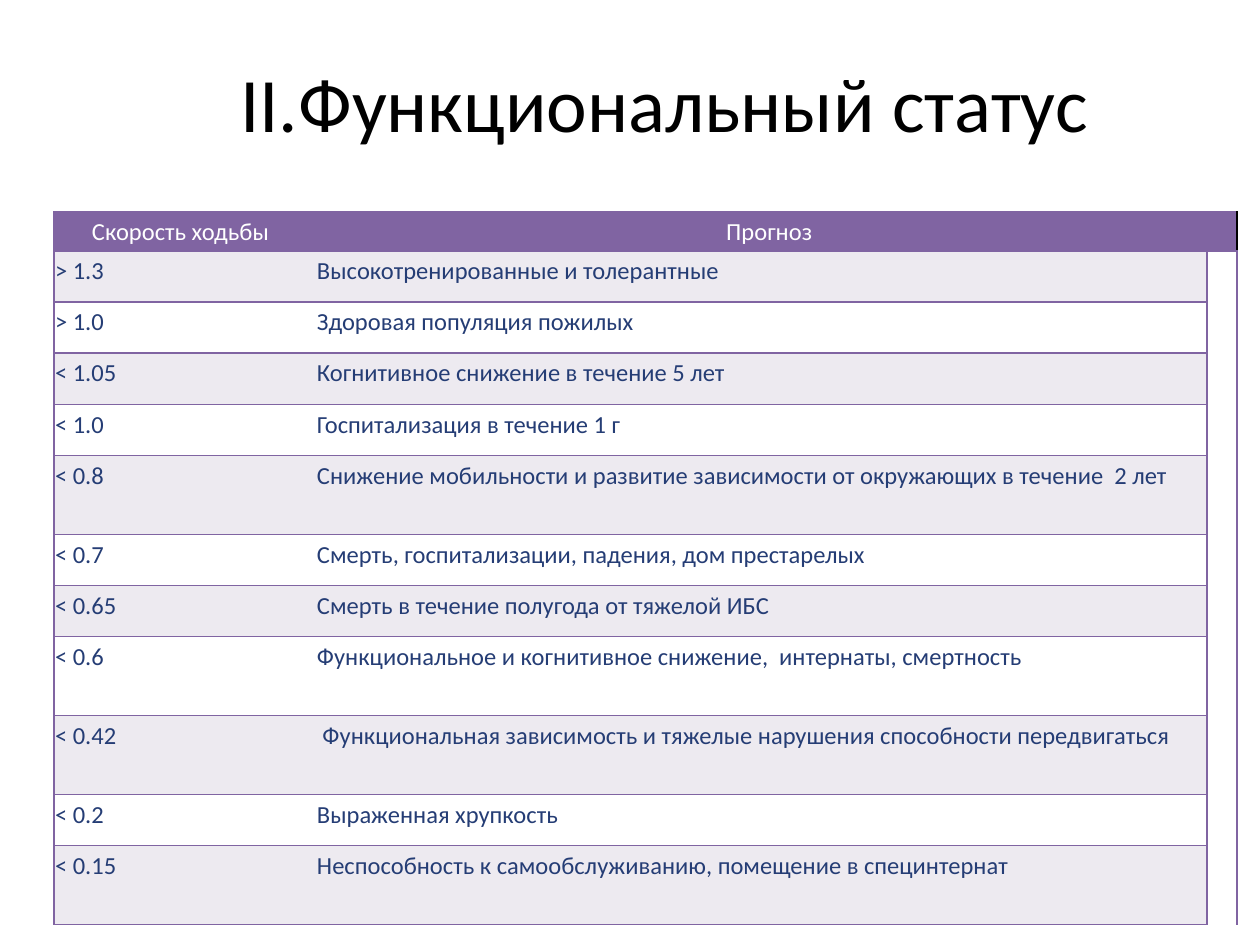
"""Build the slide on functional status: walking speed against prognosis."""
from typing import NamedTuple

from lxml.etree import SubElement
from pptx import Presentation
from pptx.dml.color import RGBColor
from pptx.enum.text import MSO_ANCHOR, PP_ALIGN
from pptx.oxml.ns import qn
from pptx.util import Emu, Pt

COLORS = {"title": "000000", "violet": "8064A2", "header_text": "FFFFFF",
          "edge": "000000", "text": "253D75", "odd": "EDEAF0", "even": "FFFFFF"}
FONT = "Calibri"
PLAIN_STYLE = "{2D5ABB26-0587-4C30-8999-92F81FD0307C}"
COLUMNS = (253, 9, 891, 9)
HEADER_HEIGHT, SHORT, TALL = 39, 49, 79


class Level(NamedTuple):
    speed: str
    prognosis: str
    height: int = SHORT


LEVELS = (
    Level("> 1.3", "Высокотренированные и толерантные", 50),
    Level("> 1.0", "Здоровая популяция пожилых"),
    Level("< 1.05", "Когнитивное снижение в течение 5 лет", 50),
    Level("< 1.0", "Госпитализация в течение 1 г"),
    Level("< 0.8", "Снижение мобильности и развитие зависимости от окружающих в течение  2 лет", TALL),
    Level("< 0.7", "Смерть, госпитализации, падения, дом престарелых"),
    Level("< 0.65", "Смерть в течение полугода от тяжелой ИБС"),
    Level("< 0.6", "Функциональное и когнитивное снижение,  интернаты, смертность", TALL),
    Level("< 0.42", " Функциональная зависимость и тяжелые нарушения способности передвигаться", TALL),
    Level("< 0.2", "Выраженная хрупкость"),
    Level("< 0.15", "Неспособность к самообслуживанию, помещение в специнтернат", TALL),
)


def px(length: int) -> Emu:
    """Turn pixels into EMU."""
    return Emu(round(length * 914400 / 126))


def add_run(paragraph, text: str, size: int, color: str) -> None:
    """Add one formatted run."""
    run = paragraph.add_run()
    run.text = text
    run.font.name = FONT
    run.font.size = Pt(size)
    run.font.color.rgb = RGBColor.from_string(COLORS[color])


def set_borders(cell, **sides: str) -> None:
    """Draw 1 pt borders on the sides named L, R, T and B, in that order."""
    properties = cell._tc.get_or_add_tcPr()
    for index, (side, color) in enumerate(sides.items()):
        line = SubElement(properties, qn(f"a:ln{side}"), w=str(Pt(1)))
        fill = SubElement(line, qn("a:solidFill"))
        SubElement(fill, qn("a:srgbClr"), val=COLORS[color])
        properties.insert(index, line)


def fill_cell(cell, text: str, fill: str, color: str, align: PP_ALIGN) -> None:
    """Fill a cell and write its text."""
    cell.fill.solid()
    cell.fill.fore_color.rgb = RGBColor.from_string(COLORS[fill])
    cell.margin_left = cell.margin_right = cell.margin_top = px(1)
    cell.margin_bottom = 0
    paragraph = cell.text_frame.paragraphs[0]
    paragraph.alignment = align
    paragraph.line_spacing = 1.15
    paragraph.space_after = Pt(10)
    add_run(paragraph, text, 14, color)


def add_header(table) -> None:
    """Write the header row, whose second cell spans three columns."""
    speed, prognosis = table.cell(0, 0), table.cell(0, 1)
    prognosis.merge(table.cell(0, 3))
    table.rows[0].height = px(HEADER_HEIGHT)
    for cell, text in ((speed, "Скорость ходьбы"), (prognosis, "Прогноз ")):
        fill_cell(cell, text, "violet", "header_text", PP_ALIGN.CENTER)
    set_borders(speed, L="violet", T="violet", B="violet")
    set_borders(prognosis, R="edge", T="violet", B="violet")


def add_level(table, row: int, level: Level) -> None:
    """Write one level of walking speed with its prognosis."""
    speed, prognosis, tail = (table.cell(row, column) for column in (0, 2, 3))
    speed.merge(table.cell(row, 1))
    table.rows[row].height = px(level.height)
    band = "odd" if row % 2 else "even"
    for cell, text in ((speed, level.speed), (prognosis, level.prognosis)):
        fill_cell(cell, text, band, "text", PP_ALIGN.LEFT)
    set_borders(speed, L="violet", T="violet", B="violet")
    set_borders(prognosis, R="violet", T="violet", B="violet")
    set_borders(tail, L="violet")
    tail.fill.background()


def add_title(slide) -> None:
    """Place and format the title."""
    title = slide.shapes.title
    title.left, title.top, title.width, title.height = map(px, (35, 38, 1260, 127))
    title.text_frame.vertical_anchor = MSO_ANCHOR.MIDDLE
    paragraph = title.text_frame.paragraphs[0]
    paragraph.alignment = PP_ALIGN.CENTER
    add_run(paragraph, "II.Функциональный статус", 44, "title")


def add_prognosis_table(slide) -> None:
    """Add the table of walking speeds."""
    height = HEADER_HEIGHT + sum(level.height for level in LEVELS)
    table = slide.shapes.add_table(
        len(LEVELS) + 1, len(COLUMNS),
        px(54), px(212), px(sum(COLUMNS)), px(height)).table
    table._tbl.tblPr[0].text = PLAIN_STYLE
    table.horz_banding = False
    for column, width in zip(table.columns, COLUMNS):
        column.width = px(width)
    add_header(table)
    for row, level in enumerate(LEVELS, start=1):
        add_level(table, row, level)


def main() -> None:
    """Build and save the presentation."""
    presentation = Presentation()
    presentation.slide_width, presentation.slide_height = px(1260), px(945)
    slide = presentation.slides.add_slide(presentation.slide_layouts[5])
    add_title(slide)
    add_prognosis_table(slide)
    presentation.save("out.pptx")


if __name__ == "__main__":
    main()
